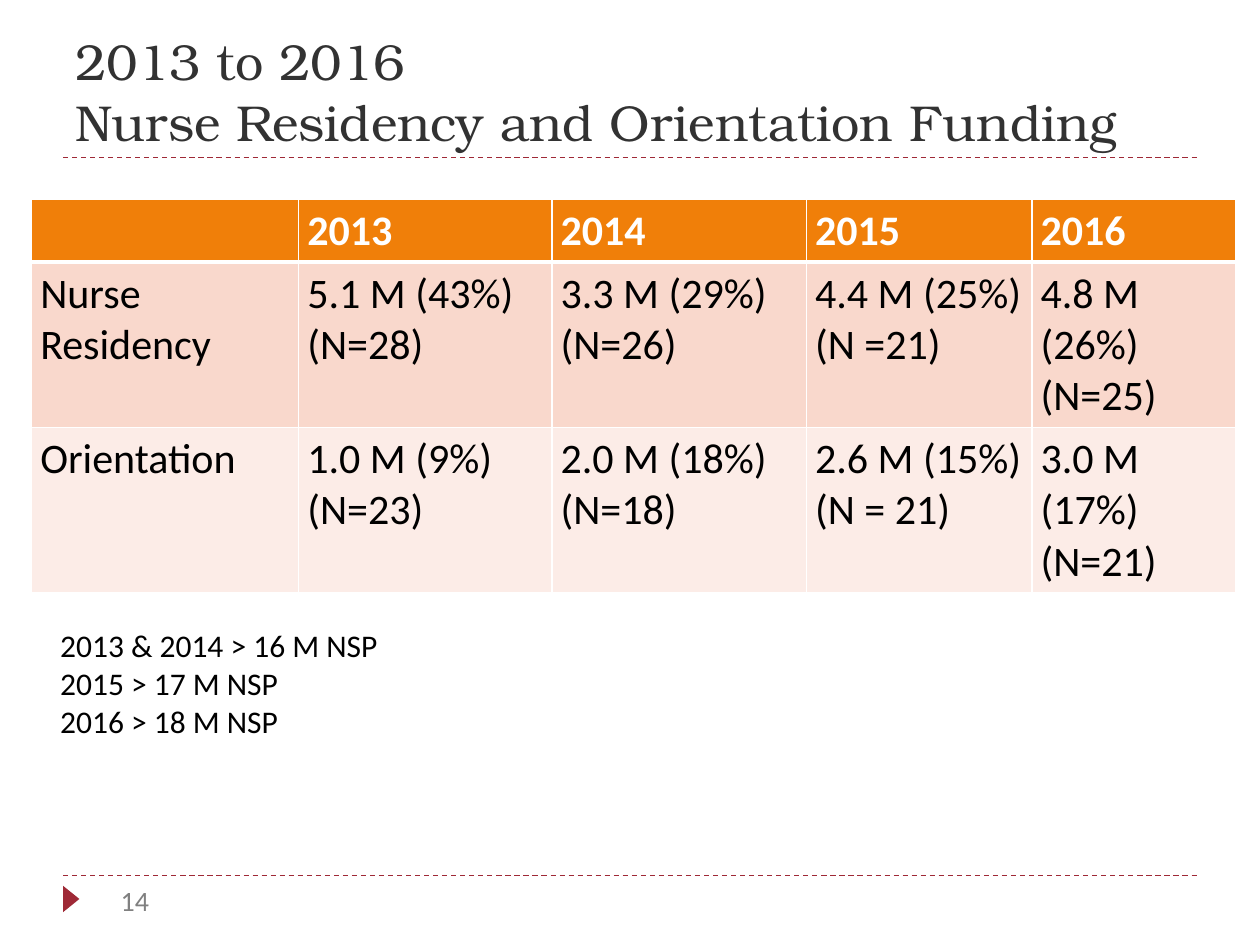
from dataclasses import dataclass

from lxml.etree import SubElement
from pptx import Presentation
from pptx.dml.color import RGBColor
from pptx.enum.dml import MSO_LINE
from pptx.enum.shapes import MSO_CONNECTOR, MSO_SHAPE
from pptx.enum.text import MSO_ANCHOR, MSO_AUTO_SIZE
from pptx.oxml import parse_xml
from pptx.oxml.ns import nsdecls, qn
from pptx.util import Inches, Pt


@dataclass(frozen=True)
class Theme:
    title_font: str = "TeX Gyre Bonum"
    body_font: str = "Calibri"
    title_size: float = 28.8
    table_size: float = 24
    note_size: float = 18
    number_size: float = 16
    title: str = "323232"
    text: str = "000000"
    muted: str = "808080"
    accent: str = "9F2936"
    header: str = "F07F09"
    bands: tuple = ("F9D8CC", "FCECE7")
    white: str = "FFFFFF"


def color(code):
    return RGBColor.from_string(code)


class SlideBuilder:
    """Draws on one slide, measured on a grid of 40 columns by 30 rows."""

    CELL = 0.25

    def __init__(self, deck, theme):
        self.theme = theme
        self.page = deck.slides.add_slide(deck.slide_layouts[5])

    def grid(self, *counts):
        return [Inches(count * self.CELL) for count in counts]

    def style(self, frame, font, size, code, bold=False):
        for para in frame.paragraphs:
            for span in para.runs:
                span.font.name = font
                span.font.size = Pt(size)
                span.font.bold = bold
                span.font.color.rgb = color(code)

    def title(self, text, left, top, width, height):
        box = self.page.shapes.title
        box.left, box.top, box.width, box.height = self.grid(left, top, width, height)
        frame = box.text_frame
        frame.text = text
        frame.auto_size = MSO_AUTO_SIZE.NONE
        frame.vertical_anchor = MSO_ANCHOR.BOTTOM
        for para in frame.paragraphs:
            para.alignment = 1
        self.style(frame, self.theme.title_font, self.theme.title_size, self.theme.title)

    def rule(self, left, right, row):
        line = self.page.shapes.add_connector(
            MSO_CONNECTOR.STRAIGHT, *self.grid(left, row, right, row))
        line.line.color.rgb = color(self.theme.accent)
        line.line.width = Pt(0.75)
        line.line.dash_style = MSO_LINE.DASH
        SubElement(line._element.spPr, qn("a:effectLst"))

    def marker(self, left, top, width, height):
        shape = self.page.shapes.add_shape(
            MSO_SHAPE.ISOSCELES_TRIANGLE, *self.grid(left, top, width, height))
        shape.rotation = 90
        shape.shadow.inherit = False
        shape.fill.solid()
        shape.fill.fore_color.rgb = color(self.theme.accent)
        shape.line.fill.background()

    def text(self, text, left, top, width, height, size, code):
        box = self.page.shapes.add_textbox(*self.grid(left, top, width, height))
        frame = box.text_frame
        frame.text = text
        frame.word_wrap = False
        frame.auto_size = MSO_AUTO_SIZE.SHAPE_TO_FIT_TEXT
        self.style(frame, self.theme.body_font, size, code)

    def borders(self, cell, bottom):
        properties = cell._tc.get_or_add_tcPr()
        widths = {"lnL": 1, "lnR": 1, "lnT": 1, "lnB": bottom}
        for position, (side, width) in enumerate(widths.items()):
            properties.insert(position, parse_xml(
                f'<a:{side} {nsdecls("a")} w="{Pt(width)}"><a:solidFill>'
                f'<a:srgbClr val="{self.theme.white}"/></a:solidFill></a:{side}>'))

    def table(self, rows, left, top, widths, heights):
        theme = self.theme
        table = self.page.shapes.add_table(
            len(rows), len(widths),
            *self.grid(left, top, sum(widths), sum(heights))).table
        table.horz_banding = False
        for column, width in zip(table.columns, self.grid(*widths)):
            column.width = width
        for row, height in zip(table.rows, self.grid(*heights)):
            row.height = height
        for row_index, row in enumerate(rows):
            header = row_index == 0
            fill = theme.header if header else theme.bands[(row_index - 1) % 2]
            for column_index, text in enumerate(row):
                cell = table.cell(row_index, column_index)
                cell.text_frame.text = text
                cell.margin_left = cell.margin_right = Inches(0.07)
                cell.margin_top = cell.margin_bottom = Inches(0.05)
                cell.fill.solid()
                cell.fill.fore_color.rgb = color(fill)
                self.borders(cell, bottom=3 if header else 1)
                self.style(cell.text_frame, theme.body_font, theme.table_size,
                           theme.white if header else theme.text, bold=header)


def main():
    deck = Presentation()
    deck.slide_width, deck.slide_height = Inches(10), Inches(7.5)
    theme = Theme()
    slide = SlideBuilder(deck, theme)

    # Rules, footer marker and page number
    for row in (5, 27.8):
        slide.rule(2, 38, row)
    slide.marker(1.84, 28.28, 0.84, 0.52)
    slide.text("14", 3.44, 27.84, 1.88, 1.48, theme.number_size, theme.muted)

    # Title
    slide.title("2013 to 2016\vNurse Residency and Orientation Funding",
                2, 0.68, 36, 4.32)

    # Funding by year
    slide.table(
        [["", "2013", "2014", "2015", "2016"],
         ["Nurse Residency", "5.1 M (43%)\n(N=28)", "3.3 M (29%)\n(N=26)",
          "4.4 M (25%)\n(N =21)", "4.8 M (26%)\n(N=25)"],
         ["Orientation", "1.0 M (9%)\n(N=23)", "2.0 M (18%)\n(N=18)",
          "2.6 M (15%)\n(N = 21)", "3.0 M (17%)\n(N=21)"]],
        1, 6.32, widths=(8.48, 8.04, 8.08, 7.16, 6.48), heights=(2, 5.25, 5.25))

    # Totals
    slide.text("2013 & 2014 > 16 M NSP\n2015 > 17 M NSP\n2016 > 18 M NSP",
               1.52, 19.68, 11.32, 4.04, theme.note_size, theme.text)

    deck.save("out.pptx")


if __name__ == "__main__":
    main()
